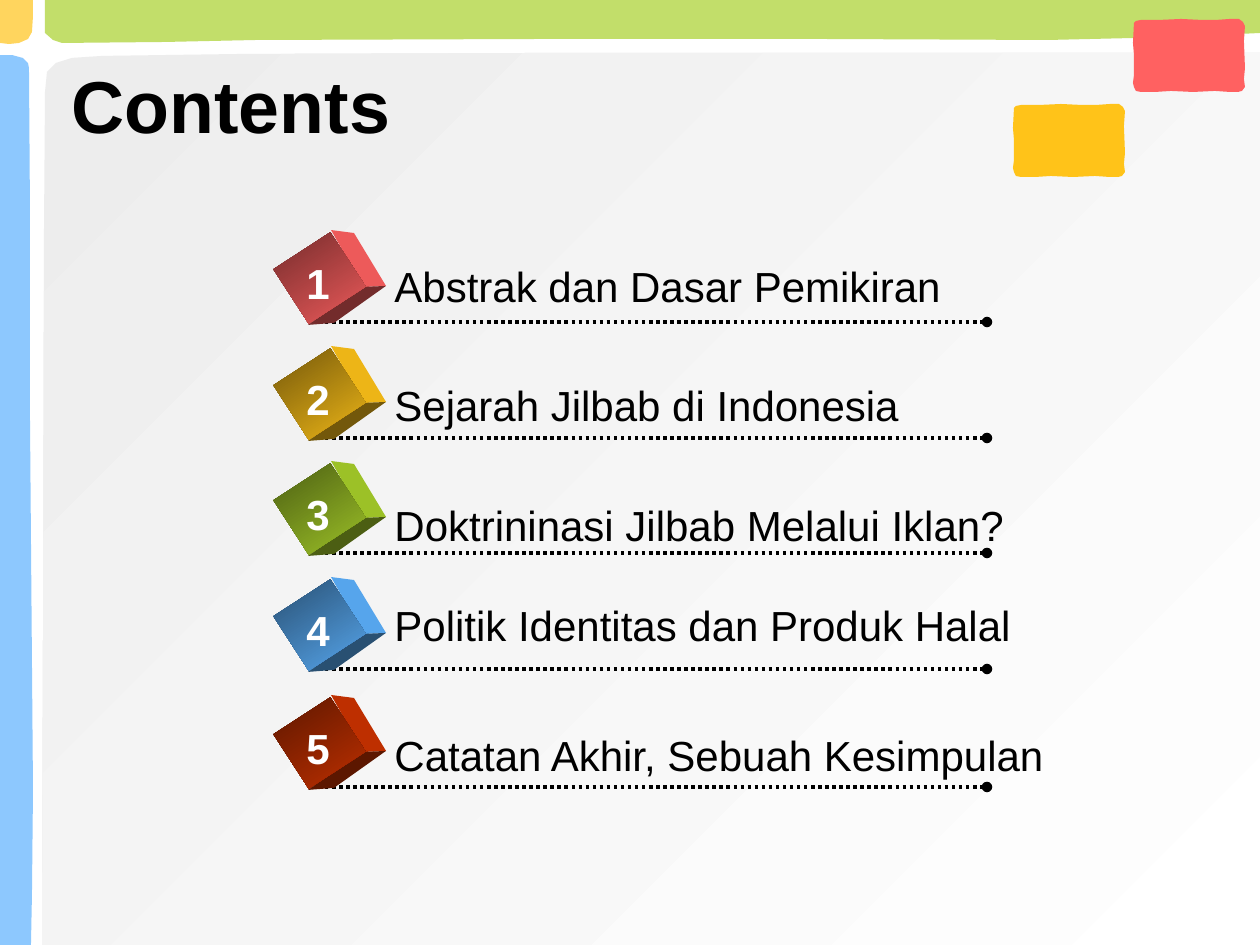
from pptx import Presentation
from pptx.dml.color import RGBColor
from pptx.enum.dml import MSO_LINE
from pptx.enum.shapes import MSO_CONNECTOR, MSO_SHAPE
from pptx.enum.text import MSO_ANCHOR, PP_ALIGN
from pptx.util import Pt
from lxml.etree import SubElement
from pptx.oxml.ns import qn

PX = 9144000 / 1260
COLORS = {
    "text": "000000", "number": "FFFFFF",
    "panel_start": "EDEDED", "panel_end": "FFFFFF",
    "top_band": "C2DE6A", "side_band": "8DC8FE", "corner": "FFD55E",
    "coral": "FF6161", "amber": "FFC319", "green": "A8D02A",
    "blue": "5CB1FE", "rust": "CC3300",
}
PANEL = [(1218, 945), (1218, 1), (916, 1), (504, 1), (200, 2), (60, 4),
         (30, 6), (14, 11), (5, 20), (3, 40), (2, 177), (1, 586), (0, 893)]
TOP_BAND = [(0, 0), (1215, 0), (1215, 33), (1130, 37), (1003, 40),
            (780, 39), (492, 39), (211, 40), (120, 42), (17, 43), (8, 40), (0, 33)]
SIDE_BAND = [(0, 0), (12, 0), (23, 3), (28, 8), (29, 13), (30, 155), (30, 361),
             (33, 735), (32, 840), (31, 890), (0, 890)]
CORNER = [(0, 0), (33, 0), (33, 16), (32, 32), (28, 39), (19, 43), (9, 44), (0, 43)]
TILE = [(0, 24), (1, 4), (3, 2), (8, 1), (26, 1), (48, 0), (69, 1), (83, 1),
        (97, 0), (106, 0), (110, 3), (112, 7), (111, 22), (112, 49), (111, 60),
        (112, 68), (109, 72), (105, 73), (97, 73), (82, 72), (60, 73), (38, 72),
        (22, 73), (8, 73), (3, 72), (1, 68), (0, 64), (1, 56), (1, 36)]
RIGHT_FACE = [(55, 0), (78, 3), (110, 56), (87, 57)]
LOWER_FACE = [(32, 95), (87, 57), (110, 56), (58, 93)]
ROWS = [
    ("Abstrak dan Dasar Pemikiran", "coral", 230, 24),
    ("Sejarah Jilbab di Indonesia", "amber", 346, 27),
    ("Doktrininasi Jilbab Melalui Iklan?", "green", 461, 32),
    ("Politik Identitas dan Produk Halal", "blue", 577, 16),
    ("Catatan Akhir, Sebuah Kesimpulan", "rust", 695, 28),
]


def px(*lengths):
    return [round(length * PX) for length in lengths]


def shade(name, factor):
    return RGBColor(*(round(part * factor) for part in RGBColor.from_string(COLORS[name])))


def fill_gradient(shape, start, end, angle):
    shape.fill.gradient()
    shape.fill.gradient_angle = angle
    for stop, color in zip(shape.fill.gradient_stops, (start, end)):
        stop.color.rgb = color


def add_outline(page, points, left, top, color):
    builder = page.shapes.build_freeform(*points[0], scale=PX)
    builder.add_line_segments(points[1:], close=True)
    shape = builder.convert_to_shape(*px(left, top))
    shape.shadow.inherit = False
    shape.line.fill.background()
    shape.fill.solid()
    shape.fill.fore_color.rgb = color
    return shape


def format_text(frame, text, size, color, bold=False):
    frame.text = text
    font = frame.paragraphs[0].runs[0].font
    font.name, font.size, font.bold = "Arial", Pt(size), bold
    font.color.rgb = shade(color, 1)


def add_label(page, text, left, top, width, color="text", bold=False):
    box = page.shapes.add_textbox(*px(left, top, width, 63))
    box.text_frame.word_wrap = True
    format_text(box.text_frame, text, 24, color, bold)
    return box


def add_backdrop(page):
    panel = add_outline(page, PANEL, 42, 52, shade("panel_start", 1))
    fill_gradient(panel, shade("panel_start", 1), shade("panel_end", 1), 315)
    for points, left, top, color in (
        (TOP_BAND, 45, 0, "top_band"), (SIDE_BAND, 0, 55, "side_band"),
        (CORNER, 0, 0, "corner"), (TILE, 1133, 19, "coral"), (TILE, 1013, 104, "amber"),
    ):
        add_outline(page, points, left, top, shade(color, 1))


def add_title(page, text, left, top, width, height):
    title = page.shapes.title
    page.shapes.element.append(title.element)
    title.left, title.top, title.width, title.height = px(left, top, width, height)
    title.text_frame.vertical_anchor = MSO_ANCHOR.MIDDLE
    format_text(title.text_frame, text, 42, "text", bold=True)
    title.text_frame.paragraphs[0].alignment = PP_ALIGN.LEFT


def add_rule(page, left, right, y):
    rule = page.shapes.add_connector(MSO_CONNECTOR.STRAIGHT, *px(left, y, right, y))
    rule.line.width = Pt(2)
    rule.line.color.rgb = shade("text", 1)
    rule.line.dash_style = MSO_LINE.ROUND_DOT
    SubElement(rule.line._get_or_add_ln(), qn("a:tailEnd"), type="oval")
    SubElement(rule.element.spPr, qn("a:effectLst"))


def add_cube(page, number, left, top, color):
    add_outline(page, RIGHT_FACE, left, top, shade(color, 0.93))
    add_outline(page, LOWER_FACE, left, top, shade(color, 0.45))
    front = page.shapes.add_shape(MSO_SHAPE.RECTANGLE, *px(left + 11, top + 14, 65, 68))
    front.rotation = 57
    front.shadow.inherit = False
    front.line.fill.background()
    fill_gradient(front, shade(color, 0.45), shade(color, 0.93), 0)
    label = add_label(page, str(number), left + 17, top + 21, 50, "number", bold=True)
    label.text_frame.paragraphs[0].alignment = PP_ALIGN.CENTER


def add_row(page, number, text, color, left, top, text_offset):
    add_rule(page, left + 49, left + 711, top + 92)
    add_cube(page, number, left, top, color)
    add_label(page, text, left + 106, top + text_offset, 700)


def main():
    deck = Presentation()
    deck.slide_width, deck.slide_height = px(1260, 945)
    page = deck.slides.add_slide(deck.slide_layouts[5])
    add_backdrop(page)
    add_title(page, "Contents", 59, 39, 927, 130)
    for number, (text, color, top, text_offset) in enumerate(ROWS, 1):
        add_row(page, number, text, color, 276, top, text_offset)
    deck.save("out.pptx")


if __name__ == "__main__":
    main()
